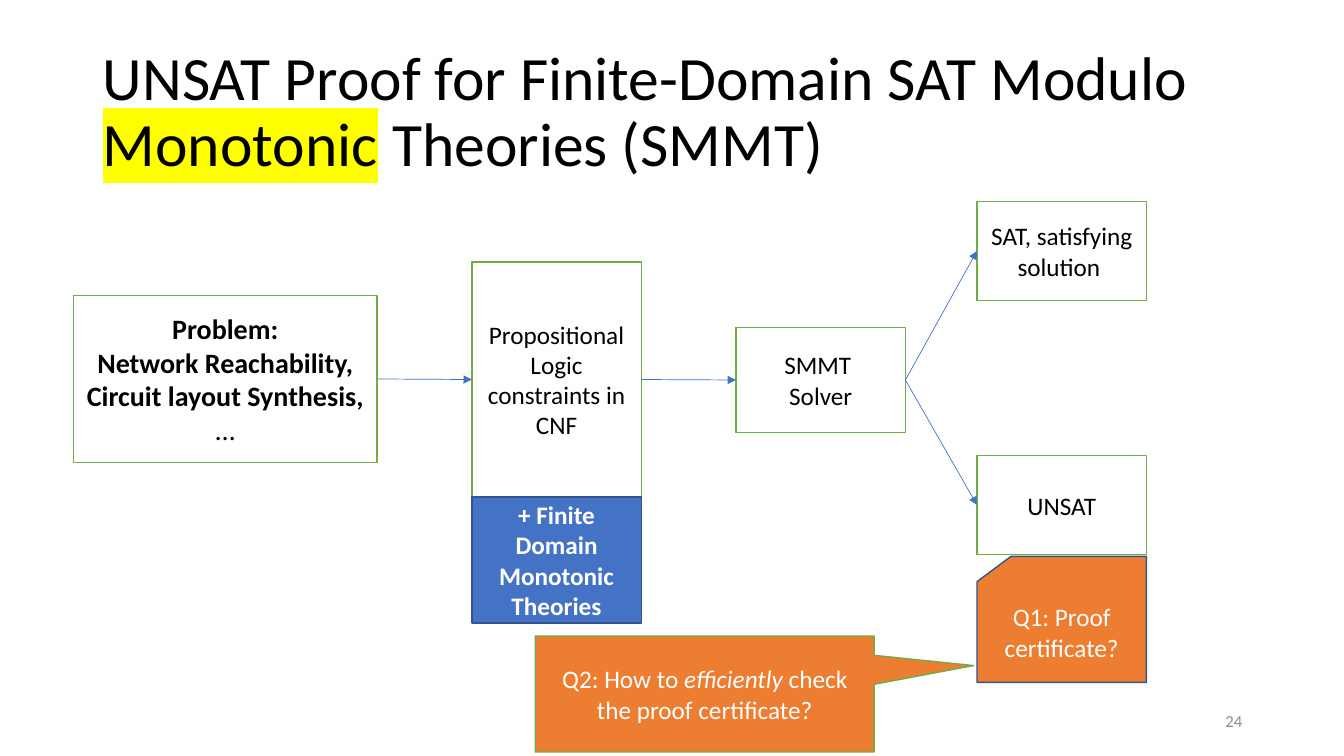
from lxml import etree
from pptx import Presentation
from pptx import util as u
from pptx.dml.color import RGBColor
from pptx.enum import shapes, text
from pptx.oxml.ns import qn

COLORS = {
    "black": "000000", "white": "FFFFFF", "grey": "8C8C8C", "green": "70AD47",
    "blue": "4472C4", "navy": "325491", "orange": "ED7D31", "yellow": "FFFF00",
}
SHAPE = shapes.MSO_SHAPE
ALIGN = text.PP_ALIGN


def rgb(name):
    return RGBColor.from_string(COLORS[name])


def format_text(frame, size, color, align, bold=False):
    frame.word_wrap = True
    frame.auto_size = text.MSO_AUTO_SIZE.NONE
    frame.vertical_anchor = text.MSO_ANCHOR.MIDDLE
    for paragraph in frame.paragraphs:
        paragraph.alignment = align
        for run in paragraph.runs:
            run.font.name = "Calibri"
            run.font.size = u.Pt(size)
            run.font.bold = bold
            run.font.color.rgb = rgb(color)


prs = Presentation()
prs.slide_width, prs.slide_height = u.Inches(13.33), u.Inches(7.5)
slide = prs.slides.add_slide(prs.slide_layouts[5])

# Title with one highlighted word
title = slide.shapes.title
title.left, title.top = u.Inches(0.92), u.Inches(0.4)
title.width, title.height = u.Inches(11.5), u.Inches(1.45)
heading = title.text_frame.paragraphs[0]
heading.line_spacing = 0.9
for words in ("UNSAT Proof for Finite-Domain SAT Modulo ", "Monotonic", " Theories (SMMT)"):
    heading.add_run().text = words
format_text(title.text_frame, 44, "black", ALIGN.LEFT)
fill = heading.runs[1].font._element.find(qn("a:solidFill"))
highlight = etree.Element(qn("a:highlight"))
etree.SubElement(highlight, qn("a:srgbClr"), val=COLORS["yellow"])
fill.addnext(highlight)

# Boxes: name, preset, (left, top, width, height), fill, line, font colour, size, bold, words
BOX_W = 1.68
PLAIN = ("white", "green", "black")
boxes = [
    ("problem", SHAPE.RECTANGLE, (0.73, 2.93, 3.01, 1.66), *PLAIN, 20, True,
     "Problem:\nNetwork Reachability,\nCircuit layout Synthesis,\n…"),
    ("logic", SHAPE.RECTANGLE, (4.68, 2.6, BOX_W, 2.33), *PLAIN, 18, False,
     "Propositional Logic constraints in CNF"),
    ("sat", SHAPE.RECTANGLE, (9.69, 2, BOX_W, 0.98), *PLAIN, 18, False,
     "SAT, satisfying solution "),
    ("solver", SHAPE.RECTANGLE, (7.3, 3.25, BOX_W, 1.04), *PLAIN, 18, False,
     "SMMT \nSolver"),
    ("unsat", SHAPE.RECTANGLE, (9.69, 4.52, BOX_W, 0.98), *PLAIN, 18, False, "UNSAT"),
    ("proof", SHAPE.FLOWCHART_CARD, (9.69, 5.52, BOX_W, 1.25),
     "orange", "navy", "white", 18, False, "Q1: Proof certificate?"),
    ("theories", SHAPE.RECTANGLE, (4.68, 4.93, BOX_W, 1.25),
     "blue", "navy", "white", 18, True, "+ Finite Domain Monotonic Theories"),
    ("check", SHAPE.RECTANGULAR_CALLOUT, (5.31, 6.31, 3.36, 1.15),
     "orange", "green", "white", 18, False,
     "Q2: How to efficiently check the proof certificate?"),
]
nodes = {}
for name, preset, place, fill_color, line_color, font_color, size, bold, words in boxes:
    box = slide.shapes.add_shape(preset, *map(u.Inches, place))
    box.shadow.inherit = False
    box.fill.solid()
    box.fill.fore_color.rgb = rgb(fill_color)
    box.line.color.rgb = rgb(line_color)
    box.line.width = u.Pt(1)
    box.text_frame.text = words
    if name == "check":
        question = box.text_frame.paragraphs[0]
        before, after = words.split("efficiently")
        question.text = before
        question.add_run().text = "efficiently"
        question.add_run().text = after
        question.runs[1].font.italic = True
    format_text(box.text_frame, size, font_color, ALIGN.CENTER, bold)
    nodes[name] = box

nodes["problem"].text_frame.paragraphs[-1].runs[0].font.bold = False
nodes["check"].adjustments[0] = 0.794
nodes["check"].adjustments[1] = -0.245

# Arrows run from the right side of one box to the left side of the next
LEFT_SIDE, RIGHT_SIDE = 1, 3
for source, target in (("problem", "logic"), ("logic", "solver"),
                       ("solver", "sat"), ("solver", "unsat")):
    arrow = slide.shapes.add_connector(shapes.MSO_CONNECTOR.STRAIGHT, 0, 0, 0, 0)
    arrow.begin_connect(nodes[source], RIGHT_SIDE)
    arrow.end_connect(nodes[target], LEFT_SIDE)
    arrow.line.color.rgb = rgb("blue")
    arrow.line.width = u.Pt(0.5)
    etree.SubElement(arrow.line._get_or_add_ln(), qn("a:tailEnd"), type="triangle")
    etree.SubElement(arrow._element.spPr, qn("a:effectLst"))

page_number = slide.shapes.add_textbox(*map(u.Inches, (9.42, 6.95, 3, 0.4)))
page_number.text_frame.text = "24"
format_text(page_number.text_frame, 12, "grey", ALIGN.RIGHT)

prs.save("out.pptx")
